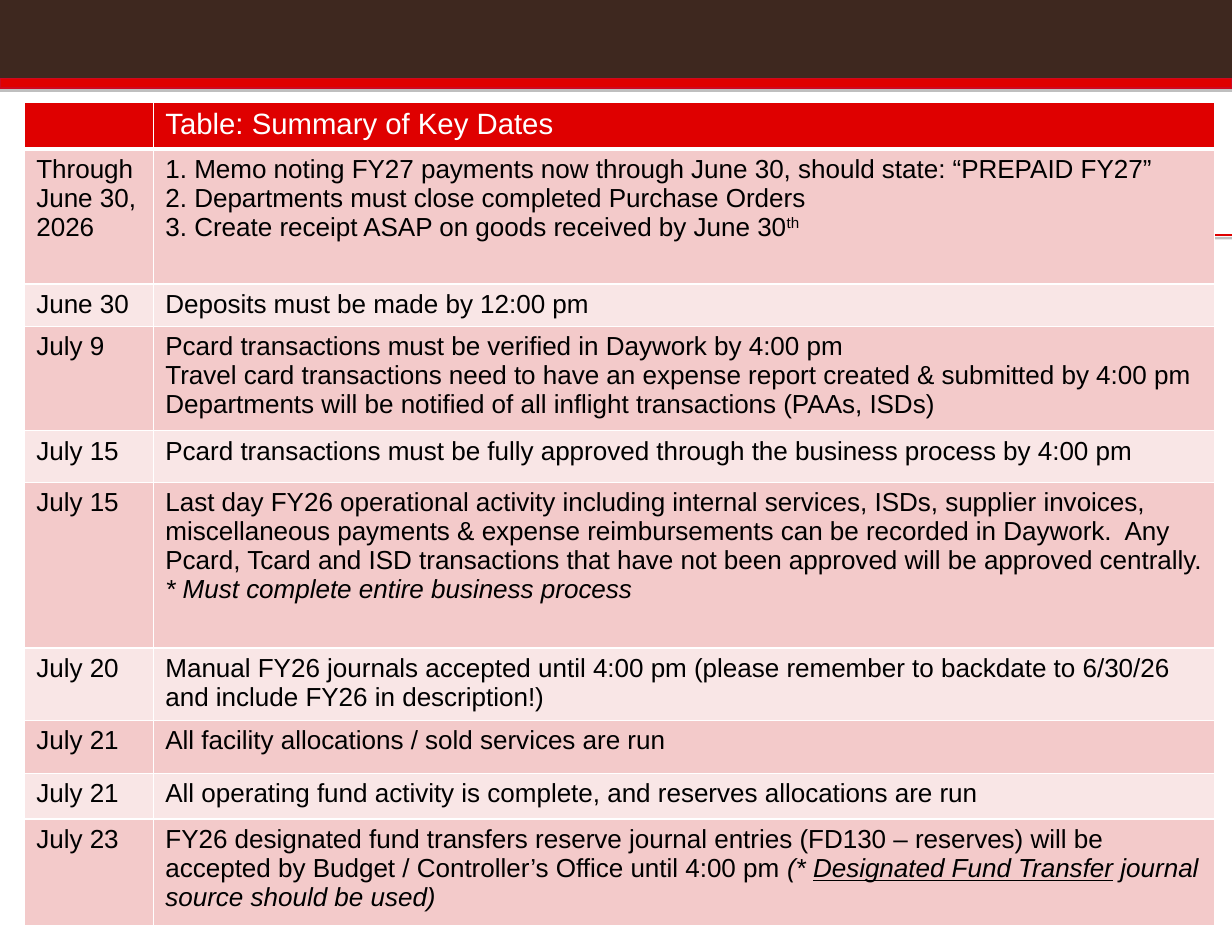
import pptx
import pptx.util
import pptx.dml.color
import pptx.enum.shapes
import pptx.oxml

RGBColor = pptx.dml.color.RGBColor
PX = 9144
BROWN = RGBColor(0x3E, 0x28, 0x1F)
RED = RGBColor(0xDF, 0x00, 0x00)
CRIMSON = RGBColor(0xCD, 0x09, 0x20)
ROSE = RGBColor(0xF3, 0xCA, 0xCA)
BLUSH = RGBColor(0xF9, 0xE6, 0xE6)
WHITE = RGBColor(0xFF, 0xFF, 0xFF)
BLACK = RGBColor(0x00, 0x00, 0x00)
NS = 'xmlns:a="http://schemas.openxmlformats.org/drawingml/2006/main"'

COLS = [110, 904]
ROWS = [40, 115, 36, 89, 44, 141, 62, 45, 39, 91]
TITLE = "Table: Summary of Key Dates"
DATES = [
    (["Through", "June 30, 2026"],
     ["1. Memo noting FY27 payments now through June 30, should state: “PREPAID FY27”",
      "2. Departments must close completed Purchase Orders",
      [("3. Create receipt ASAP on goods received by June 30", ""), ("th", "s")]]),
    (["June 30"], ["Deposits must be made by 12:00 pm"]),
    (["July 9"],
     ["Pcard transactions must be verified in Daywork by 4:00 pm",
      "Travel card transactions need to have an expense report created & submitted by 4:00 pm",
      "Departments will be notified of all inflight transactions (PAAs, ISDs)"]),
    (["July 15"],
     ["Pcard transactions must be fully approved through the business process by 4:00 pm"]),
    (["July 15"],
     ["Last day FY26 operational activity including internal services, ISDs, supplier invoices, "
      "miscellaneous payments & expense reimbursements can be recorded in Daywork.  Any Pcard, "
      "Tcard and ISD transactions that have not been approved will be approved centrally.",
      [("* Must complete entire business process", "i")]]),
    (["July 20"],
     ["Manual FY26 journals accepted until 4:00 pm (please remember to backdate to 6/30/26 "
      "and include FY26 in description!)"]),
    (["July 21"], ["All facility allocations / sold services are run"]),
    (["July 21"], ["All operating fund activity is complete, and reserves allocations are run"]),
    (["July 23"],
     [[("FY26 designated fund transfers reserve journal entries (FD130 – reserves) will be "
        "accepted by Budget / Controller’s Office until 4:00 pm", ""),
       (" (* ", "i"), ("Designated Fund Transfer", "iu"),
       (" journal source should be used)", "i")]]),
]


def shade(shape):
    """Give a shape or line its soft grey drop shadow."""
    props = shape._element.spPr
    for old in props.findall(pptx.oxml.ns.qn("a:effectLst")):
        props.remove(old)
    props.append(pptx.oxml.parse_xml(
        f'<a:effectLst {NS}><a:outerShdw dist="25400" dir="5400000" rotWithShape="0">'
        '<a:srgbClr val="808080"><a:alpha val="49000"/></a:srgbClr>'
        '</a:outerShdw></a:effectLst>'))


def add_bar(slide, box, color, edge=None):
    """Draw one filled band."""
    bar = slide.shapes.add_shape(
        pptx.enum.shapes.MSO_SHAPE.RECTANGLE, *(n * PX for n in box))
    bar.fill.solid()
    bar.fill.fore_color.rgb = color
    if edge is None:
        bar.line.fill.background()
    else:
        bar.line.color.rgb = edge
        bar.line.width = pptx.util.Pt(0.75)
    shade(bar)


def add_frame(slide, box):
    """Draw the top bands and the red rule within the box."""
    left, top, width, height = box
    add_bar(slide, (left, top, width, 67), BROWN)
    add_bar(slide, (left, top + 67, width, 8), RED, CRIMSON)
    rule = slide.shapes.add_connector(
        pptx.enum.shapes.MSO_CONNECTOR.STRAIGHT, (left + 75) * PX,
        (top + height // 4) * PX, (left + width) * PX, (top + height // 4) * PX)
    rule.line.color.rgb = RED
    rule.line.width = pptx.util.Pt(1.5)
    shade(rule)


def set_edges(cell, base):
    """Outline a cell in white, with its own width at the base."""
    props = cell._tc.get_or_add_tcPr()
    for spot, (side, width) in enumerate(zip("LRTB", (1, 1, 1, base))):
        props.insert(spot, pptx.oxml.parse_xml(
            f'<a:ln{side} {NS} w="{pptx.util.Pt(width)}"><a:solidFill>'
            f'<a:srgbClr val="{WHITE}"/></a:solidFill></a:ln{side}>'))


def fill_cell(cell, lines, size, ink, paint, base=1):
    """Paint a cell and write its lines, each plain text or styled runs."""
    cell.fill.solid()
    cell.fill.fore_color.rgb = paint
    set_edges(cell, base)
    frame = cell.text_frame
    for spot, line in enumerate(lines):
        para = frame.add_paragraph() if spot else frame.paragraphs[0]
        for text, style in [(line, "")] if isinstance(line, str) else line:
            run = para.add_run()
            run.text = text
            if "i" in style:
                run.font.italic = True
            if "u" in style:
                run.font.underline = True
            if "s" in style:
                run.font._element.set("baseline", "30000")
        para.font.name = "Arial"
        para.font.size = pptx.util.Pt(size)
        para.font.bold = False
        para.font.color.rgb = ink


def add_dates(slide, box):
    """Build the table of key dates in the box."""
    grid = slide.shapes.add_table(
        len(ROWS), len(COLS), *(n * PX for n in box)).table
    for col, width in zip(grid.columns, COLS):
        col.width = width * PX
    for row, height in zip(grid.rows, ROWS):
        row.height = height * PX
    for cell, lines in zip(grid.rows[0].cells, ([""], [TITLE])):
        fill_cell(cell, lines, 18, WHITE, RED, 3)
    for spot, pair in enumerate(DATES, 1):
        for cell, lines in zip(grid.rows[spot].cells, pair):
            fill_cell(cell, lines, 16, BLACK, ROSE if spot % 2 else BLUSH)


def main():
    """Make the slide and save it."""
    deck = pptx.Presentation()
    deck.slide_width, deck.slide_height = 1050 * PX, 800 * PX
    slide = deck.slides.add_slide(deck.slide_layouts[6])
    add_frame(slide, (0, 0, 1050, 800))
    add_dates(slide, (21, 87, sum(COLS), sum(ROWS)))
    deck.save("out.pptx")


if __name__ == "__main__":
    main()
